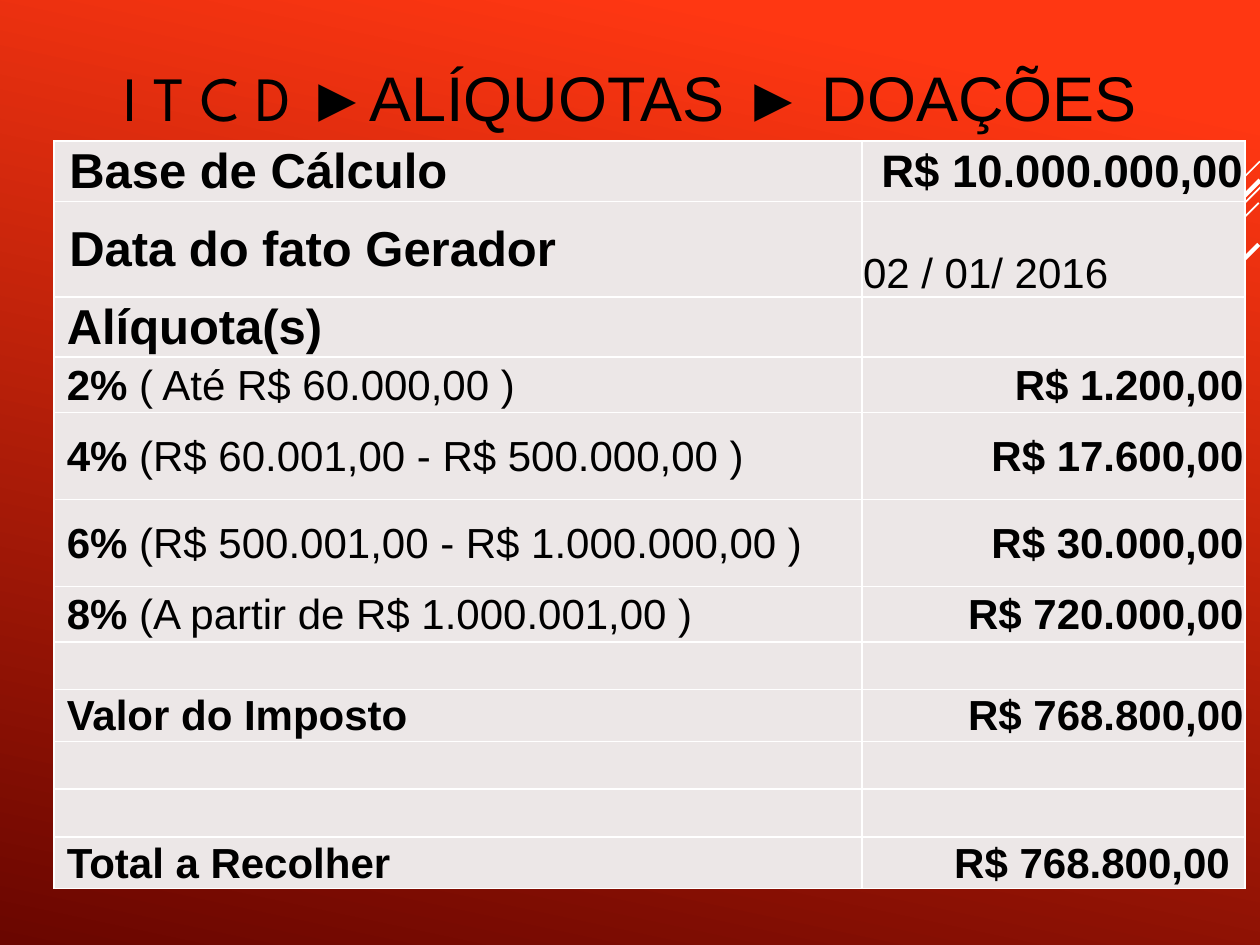
from lxml.etree import SubElement as Sub
from pptx import Presentation
from pptx.dml.color import RGBColor as Rgb
from pptx.enum.shapes import MSO_CONNECTOR as Conn
from pptx.enum.text import MSO_ANCHOR as Anchor, PP_ALIGN as Align
from pptx.oxml.ns import qn
from pptx.util import Inches, Pt

HUES = {"top": "FF3712", "base": "6A0600", "cell": "ECE7E7", "line": "FFFFFF", "text": "000000"}
RAYS = [
    (10, 1.28, 3.43, 1),
    (10.01, 1.48, 5.27, 1),
    (9.99, 1.61, 4.28, 1),
    (10, 1.43, 4.2, 2.5),
    (9.99, 1.94, 3.75, 2.5),
]
COLS = [6.41, 3.04]
ROWS = [
    (0.44, [("Base de Cálculo", 28, True)], ("R$ 10.000.000,00", 26, True)),
    (0.76, [("Data do fato Gerador", 28, True)], ("02 / 01/ 2016", 24, False)),
    (0.44, [("Alíquota(s)", 28, True)], None),
    (0.44, [("2%", 24, True), (" ( Até R$ 60.000,00 )", 24, False)], ("R$ 1.200,00", 24, True)),
    (0.69, [("4%", 24, True), (" (R$ 60.001,00 - R$ 500.000,00 )", 24, False)], ("R$ 17.600,00", 24, True)),
    (0.69, [("6%", 24, True), (" (R$ 500.001,00 - R$ 1.000.000,00 )", 24, False)], ("R$ 30.000,00", 24, True)),
    (0.44, [("8%", 24, True), (" (A partir de R$ 1.000.001,00 )", 24, False)], ("R$ 720.000,00", 24, True)),
    (0.38, [], None),
    (0.38, [("Valor do Imposto", 24, True)], ("R$ 768.800,00", 24, True)),
    (0.38, [], None),
    (0.38, [], None),
    (0.38, [("Total a Recolher", 24, True)], ("R$ 768.800,00", 24, True)),
]


def hue(name):
    return Rgb.from_string(HUES[name])


def add_run(para, text, size, bold=False, face="Arial"):
    run = para.add_run()
    run.text = text
    run.font.size = Pt(size)
    run.font.bold = bold
    run.font.name = face
    run.font.color.rgb = hue("text")


def add_back(slide):
    fill = slide.background.fill
    fill.gradient()
    fill.gradient_angle = 258
    for stop, place, name in zip(fill.gradient_stops, (0.1, 1), ("top", "base")):
        stop.position = place
        stop.color.rgb = hue(name)


def add_rays(slide, left, top):
    for x, y, span, width in RAYS:
        ray = slide.shapes.add_connector(
            Conn.STRAIGHT, Inches(left + x), Inches(top + y),
            Inches(left + x - span), Inches(top + y + span))
        ray.line.color.rgb = hue("line")
        ray.line.width = Pt(width)
        Sub(ray._element.spPr, qn("a:effectLst"))


def add_title(slide, left, top, width, height):
    box = slide.shapes.add_textbox(Inches(left), Inches(top), Inches(width), Inches(height))
    frame = box.text_frame
    frame.word_wrap = True
    frame.vertical_anchor = Anchor.BOTTOM
    para = frame.paragraphs[0]
    para.alignment = Align.CENTER
    add_run(para, "I T C D ", 36, face="League Spartan")
    add_run(para, "►ALÍQUOTAS ► DOAÇÕES", 36)


def style_cell(cell):
    cell.margin_left = cell.margin_right = cell.margin_top = Inches(0.01)
    cell.margin_bottom = 0
    cell.vertical_anchor = Anchor.MIDDLE
    props = cell._tc.get_or_add_tcPr()
    for side in ("lnL", "lnR", "lnT", "lnB"):
        edge = Sub(props, qn(f"a:{side}"), w=str(Pt(1)))
        paint = Sub(edge, qn("a:solidFill"))
        Sub(paint, qn("a:srgbClr"), val=HUES["line"])
    cell.fill.solid()
    cell.fill.fore_color.rgb = hue("cell")


def add_grid(slide, left, top, width):
    high = sum(row[0] for row in ROWS)
    grid = slide.shapes.add_table(
        len(ROWS), len(COLS), Inches(left), Inches(top), Inches(width), Inches(high)).table
    grid.first_row = grid.horz_banding = False
    for col, span in zip(grid.columns, COLS):
        col.width = Inches(width * span / sum(COLS))
    for i, (tall, label, value) in enumerate(ROWS):
        grid.rows[i].height = Inches(tall)
        name, sum_cell = grid.cell(i, 0), grid.cell(i, 1)
        style_cell(name)
        style_cell(sum_cell)
        name.margin_left = Inches(0.12 if i < 2 else 0.1)
        for part in label:
            add_run(name.text_frame.paragraphs[0], *part)
        if value:
            para = sum_cell.text_frame.paragraphs[0]
            para.alignment = Align.RIGHT
            add_run(para, *value)
    date = grid.cell(1, 1)
    date.vertical_anchor = Anchor.BOTTOM
    date.text_frame.paragraphs[0].alignment = Align.LEFT
    grid.cell(len(ROWS) - 1, 1).margin_right = Inches(0.12)


def main():
    deck = Presentation()
    deck.slide_width, deck.slide_height = Inches(10), Inches(7.5)
    slide = deck.slides.add_slide(deck.slide_layouts[6])
    add_back(slide)
    add_rays(slide, 0, 0)
    add_title(slide, 0.28, 0.36, 9.45, 0.75)
    add_grid(slide, 0.43, 1.12, 9.45)
    deck.save("out.pptx")


if __name__ == "__main__":
    main()
